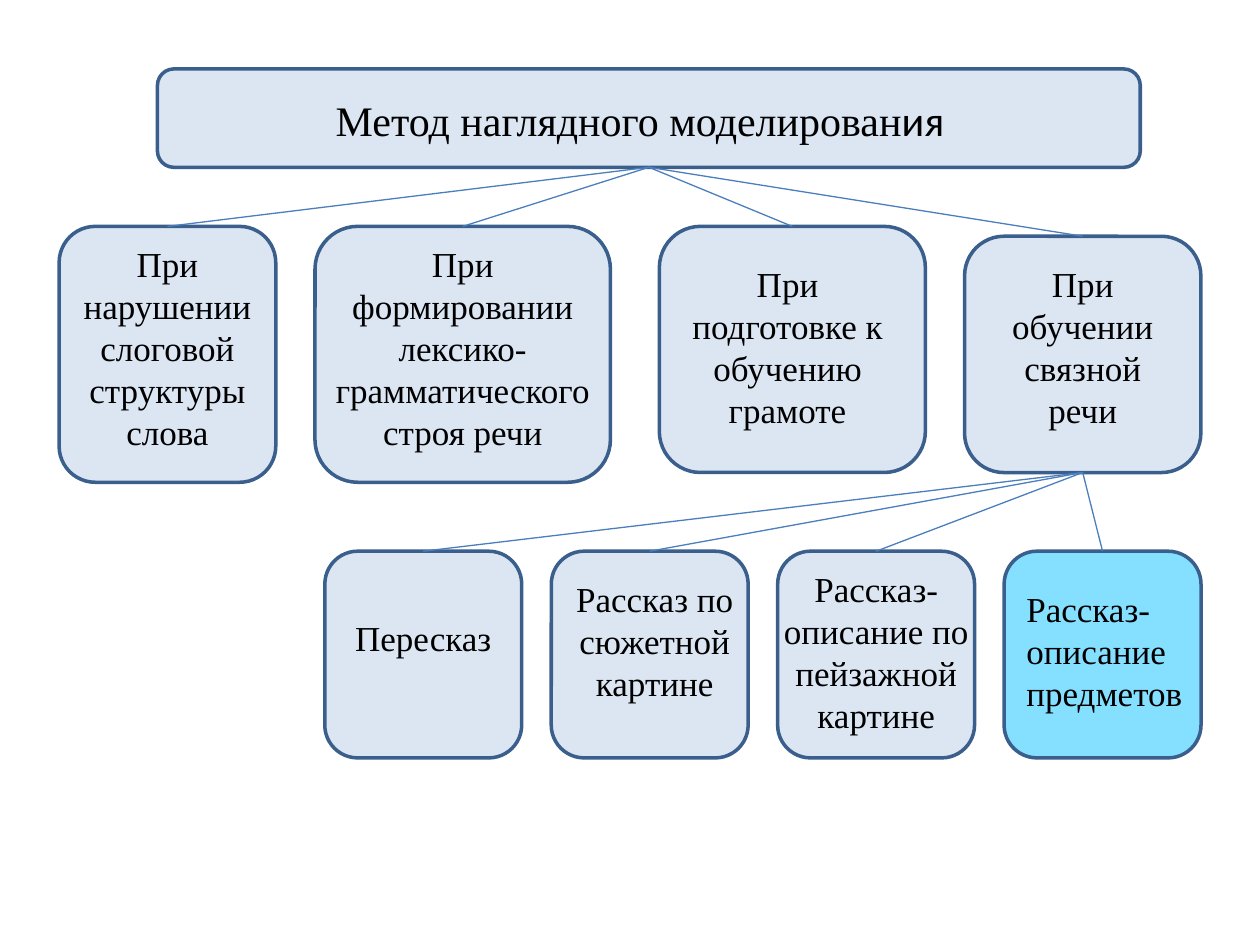
from lxml.etree import SubElement
from pptx import Presentation
from pptx.dml.color import RGBColor
from pptx.enum.shapes import MSO_CONNECTOR as Connector, MSO_SHAPE as Shape
from pptx.enum.text import MSO_ANCHOR as Anchor, MSO_AUTO_SIZE as AutoSize, PP_ALIGN as Align
from pptx.oxml.ns import qn
from pptx.util import Pt

COLORS = {"pale": "DCE6F2", "accent": "85DFFF", "border": "3A5F8C",
          "link": "4B7EBC", "text": "000000"}
FONT = "Times New Roman"
BOTTOM, TOP = 2, 0

# Frames are left, top, width, height.
TITLE_RUNS = [("Метод наглядного моделирован", FONT), ("ия", "Calibri")]
TITLE_BOX = (90, 39.4, 561.6, 56.2)
TITLE_TEXT = (101.3, 50.6, 528.8, 36)

# Text, box frame, text frame
AREAS = [
    ("При нарушении слоговой структуры слова",
     (33.8, 129.4, 123.8, 146.2), (39.4, 135, 112.5, 128)),
    ("При формировании лексико-грамматического строя речи",
     (180, 129.4, 168.8, 146.2), (180, 135, 168.8, 128)),
    ("При подготовке к обучению грамоте",
     (376.8, 129.4, 152, 140.6), (382.5, 146.2, 135, 104.4)),
    ("При обучении связной речи",
     (551.2, 135, 135, 135), (556.8, 146.2, 123.8, 104.4)),
]

# Text, text frame, fill, alignment
STORIES = [
    ("Пересказ", (185.6, 348.6, 112.5, 31.7), "pale", Align.CENTER),
    ("Рассказ по сюжетной картине", (309.4, 326.2, 129.4, 80), "pale", Align.CENTER),
    ("Рассказ-описание по пейзажной картине",
     (433.2, 320.6, 135, 104.4), "pale", Align.CENTER),
    ("Рассказ-описание предметов", (579.4, 331.9, 112.5, 80), "accent", Align.LEFT),
]
STORY_LEFT, STORY_STEP, STORY_TOP = 185.6, 129.4, 315
STORY_SIZE = (112.5, 118.1)


def rgb(name):
    return RGBColor.from_string(COLORS[name])


def add_box(shapes, frame, fill="pale"):
    sp = shapes.add_shape(Shape.ROUNDED_RECTANGLE, *map(Pt, frame))
    sp.shadow.inherit = False
    sp.fill.solid()
    sp.fill.fore_color.rgb = rgb(fill)
    sp.line.color.rgb = rgb("border")
    sp.line.width = Pt(2)
    return sp


def style(p, size, align):
    p.alignment = align
    p.font.size = Pt(size)
    p.font.name = FONT
    p.font.color.rgb = rgb("text")


def add_label(shapes, text, frame, align=Align.CENTER):
    tf = shapes.add_textbox(*map(Pt, frame)).text_frame
    tf.word_wrap = True
    tf.auto_size = AutoSize.SHAPE_TO_FIT_TEXT
    p = tf.paragraphs[0]
    p.text = text
    style(p, 20, align)


def place_title(shapes):
    """Put the title placeholder in front of its box."""
    title = shapes.title
    title.left, title.top, title.width, title.height = map(Pt, TITLE_TEXT)
    title.element.getparent().append(title.element)
    tf = title.text_frame
    tf.auto_size = AutoSize.NONE
    tf.vertical_anchor = Anchor.TOP
    p = tf.paragraphs[0]
    style(p, 24, Align.CENTER)
    for text, font in TITLE_RUNS:
        r = p.add_run()
        r.text = text
        r.font.name = font


def link(shapes, parent, children):
    for child in children:
        line = shapes.add_connector(Connector.STRAIGHT, 0, 0, 0, 0)
        line.begin_connect(parent, BOTTOM)
        line.end_connect(child, TOP)
        line.line.color.rgb = rgb("link")
        line.line.width = Pt(0.75)
        SubElement(line.element.spPr, qn("a:effectLst"))


def main():
    prs = Presentation()
    prs.slide_width, prs.slide_height = Pt(720), Pt(540)
    s = prs.slides.add_slide(prs.slide_layouts[5])
    shapes = s.shapes

    title_box = add_box(shapes, TITLE_BOX)
    place_title(shapes)
    area_boxes = [add_box(shapes, box) for _, box, _ in AREAS]
    story_boxes = [
        add_box(shapes, (STORY_LEFT + i * STORY_STEP, STORY_TOP, *STORY_SIZE), fill)
        for i, (_, _, fill, _) in enumerate(STORIES)
    ]
    for text, _, frame in AREAS:
        add_label(shapes, text, frame)
    for text, frame, _, align in STORIES:
        add_label(shapes, text, frame, align)

    link(shapes, title_box, area_boxes)
    link(shapes, area_boxes[-1], story_boxes)
    prs.save("out.pptx")


if __name__ == "__main__":
    main()
